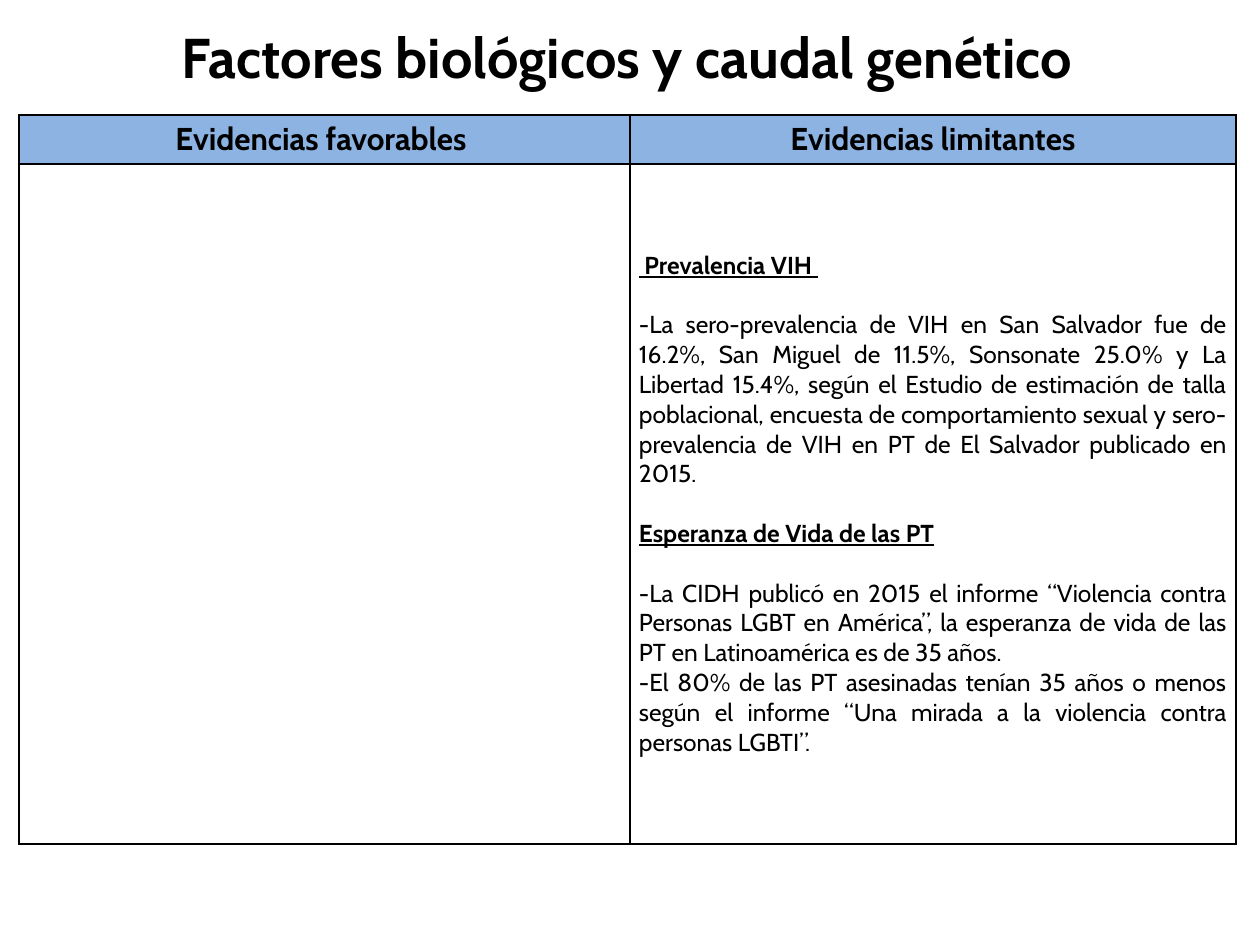
"""Build the slide comparing favourable and limiting evidence on biological factors."""
import pptx
import pptx.dml.color
import pptx.enum.text
import pptx.oxml
import pptx.oxml.ns
import pptx.util

PIXEL = 914400 / 126
FONT = "Cabin"
COLORS = {"text": "000000", "border": "000000", "header": "8DB3E2"}
ALIGN = pptx.enum.text.PP_ALIGN
MIDDLE = pptx.enum.text.MSO_ANCHOR.MIDDLE
BLANK_LINE = pptx.util.Pt(17)


def px(length):
    return pptx.util.Emu(round(length * PIXEL))


def write(paragraph, text, size, alignment, **font_format):
    paragraph.alignment = alignment
    run = paragraph.add_run()
    run.text = text
    font_format.update(name=FONT, size=pptx.util.Pt(size))
    for name, value in font_format.items():
        setattr(run.font, name, value)
    run.font.color.rgb = pptx.dml.color.RGBColor.from_string(COLORS["text"])


presentation = pptx.Presentation()
presentation.slide_width, presentation.slide_height = px(1260), px(945)
slide = presentation.slides.add_slide(presentation.slide_layouts[5])

title = slide.shapes.title
title_box = {"left": 19, "top": 16, "width": 1216, "height": 81}
for name, value in title_box.items():
    setattr(title, name, px(value))
title.text_frame.vertical_anchor = MIDDLE
write(title.text_frame.paragraphs[0], "Factores biológicos y caudal genético", 32, ALIGN.CENTER, bold=True)

column_widths = [611, 606]
row_heights = [49, 680]
table = slide.shapes.add_table(
    2, 2, px(19), px(115), px(sum(column_widths)), px(sum(row_heights))
).table
table.horz_banding = False
for column, width in zip(table.columns, column_widths):
    column.width = px(width)
for row, height in zip(table.rows, row_heights):
    row.height = px(height)

for cell in table.iter_cells():
    cell_format = {"margin_top": 0, "margin_bottom": 0, "margin_left": px(9),
                   "margin_right": px(9), "vertical_anchor": MIDDLE}
    for name, value in cell_format.items():
        setattr(cell, name, value)
    properties = cell._tc.get_or_add_tcPr()
    for side in ("lnL", "lnR", "lnT", "lnB"):
        properties.append(pptx.oxml.parse_xml(
            f'<a:{side} {pptx.oxml.ns.nsdecls("a")} w="12700"><a:solidFill>'
            f'<a:srgbClr val="{COLORS["border"]}"/></a:solidFill></a:{side}>'
        ))
    cell.fill.background()

headers = ["Evidencias favorables ", "Evidencias limitantes"]
for column_index, header in enumerate(headers):
    cell = table.cell(0, column_index)
    cell.margin_left = cell.margin_right = px(4)
    cell.fill.solid()
    cell.fill.fore_color.rgb = pptx.dml.color.RGBColor.from_string(COLORS["header"])
    write(cell.text_frame.paragraphs[0], header, 18, ALIGN.CENTER, bold=True)

sections = {
    " Prevalencia VIH ": [
        "-La sero-prevalencia de VIH en San Salvador fue de 16.2%, San Miguel de 11.5%, "
        "Sonsonate 25.0% y La Libertad 15.4%, según el Estudio de estimación de talla "
        "poblacional, encuesta de comportamiento sexual y sero-prevalencia de VIH en PT "
        "de El Salvador publicado en 2015.",
    ],
    "Esperanza de Vida de las PT": [
        "-La CIDH publicó en 2015 el informe “Violencia contra Personas LGBT en América”, "
        "la esperanza de vida de las PT en Latinoamérica es de 35 años.",
        "-El 80% de las PT asesinadas tenían 35 años o menos según el informe “Una mirada "
        "a la violencia contra personas LGBTI”. ",
    ],
}
evidence = table.cell(1, 1).text_frame
for section_index, (heading, findings) in enumerate(sections.items()):
    paragraph = evidence.add_paragraph() if section_index else evidence.paragraphs[0]
    paragraph.space_before = BLANK_LINE if section_index else 0
    paragraph.space_after = BLANK_LINE
    write(paragraph, heading, 14, ALIGN.LEFT, bold=True, underline=True)
    for finding in findings:
        write(evidence.add_paragraph(), finding, 14, ALIGN.JUSTIFY, bold=False)

presentation.save("out.pptx")
